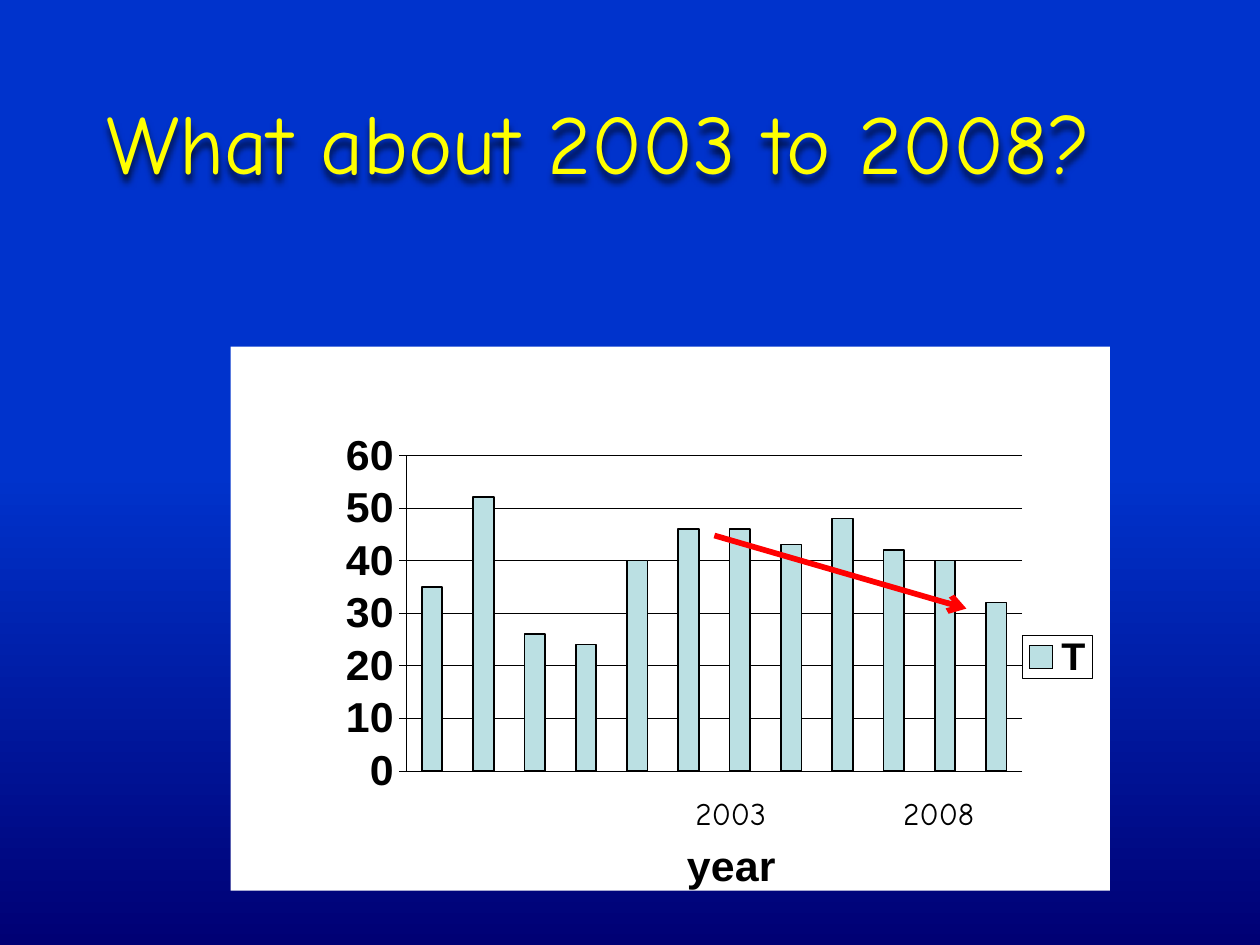
from typing import NamedTuple

from lxml.etree import fromstring
from pptx import Presentation
from pptx.chart.data import CategoryChartData
from pptx.dml.color import RGBColor
from pptx.enum.chart import XL_CHART_TYPE as Kind
from pptx.enum.chart import XL_LEGEND_POSITION as Side
from pptx.enum.chart import XL_TICK_LABEL_POSITION as Label
from pptx.enum.chart import XL_TICK_MARK as Tick
from pptx.enum.shapes import MSO_CONNECTOR as Link
from pptx.util import Inches, Pt

BLACK = RGBColor(0x00, 0x00, 0x00)
BLUE = RGBColor(0x00, 0x33, 0xCC)
NAVY = RGBColor(0x00, 0x00, 0x74)
YELLOW = RGBColor(0xFF, 0xFF, 0x00)
RED = RGBColor(0xFF, 0x00, 0x00)
TEAL = RGBColor(0xBB, 0xE0, 0xE3)
NS_A = 'xmlns:a="http://schemas.openxmlformats.org/drawingml/2006/main"'
NS_C = 'xmlns:c="http://schemas.openxmlformats.org/drawingml/2006/chart"'
C = "{http://schemas.openxmlformats.org/drawingml/2006/chart}"
SHADE = (
    f'<a:effectLst {NS_A}><a:outerShdw blurRad="50800" dist="50800" dir="5400000">'
    '<a:srgbClr val="000000"><a:alpha val="70000"/></a:srgbClr>'
    "</a:outerShdw></a:effectLst>"
)
VALUES = (35, 52, 26, 24, 40, 46, 46, 43, 48, 42, 40, 32)


class Note(NamedTuple):
    text: str
    left: float
    top: float
    width: float
    height: float
    size: float
    color: RGBColor


TITLE = Note("What about 2003 to 2008?", 0.75, 0.67, 8.83, 0.91, 48, YELLOW)
YEARS = [
    Note(year, left, 6.25, 0.8, 0.4, 18, BLACK)
    for year, left in (("2003", 5.42), ("2008", 7.07))
]


def set_font(font, size: float, color: RGBColor, name: str, bold: bool) -> None:
    font.size, font.name, font.bold = Pt(size), name, bold
    font.color.rgb = color


def set_line(line, color: RGBColor, width: float) -> None:
    line.color.rgb = color
    line.width = Pt(width)


def add_note(slide, note: Note):
    place = (note.left, note.top, note.width, note.height)
    box = slide.shapes.add_textbox(*map(Inches, place))
    box.text_frame.word_wrap = True
    box.text_frame.text = note.text
    run = box.text_frame.paragraphs[0].runs[0]
    set_font(run.font, note.size, note.color, "Comic Neue", False)
    return box


def set_place(node, index: int, **sizes: float) -> None:
    for old in node.findall(C + "layout"):
        node.remove(old)
    target = '<c:layoutTarget val="inner"/>' if node.tag == C + "plotArea" else ""
    modes = "".join(f'<c:{key}Mode val="edge"/>' for key in "xy")
    parts = "".join(f'<c:{key} val="{size}"/>' for key, size in sizes.items())
    node.insert(index, fromstring(
        f"<c:layout {NS_C}><c:manualLayout>{target}{modes}{parts}"
        "</c:manualLayout></c:layout>"
    ))


def add_panel(node, line: str) -> None:
    panel = fromstring(
        f'<c:spPr {NS_C} {NS_A}><a:solidFill><a:srgbClr val="FFFFFF"/></a:solidFill>'
        f'<a:ln w="3175">{line}</a:ln></c:spPr>'
    )
    node.find(C + "txPr").addprevious(panel)


def add_bars(slide) -> None:
    data = CategoryChartData()
    data.categories = [str(n) for n in range(1, len(VALUES) + 1)]
    data.add_series("T", VALUES)
    place = map(Inches, (1.83, 2.75, 6.98, 4.42))
    chart = slide.shapes.add_chart(Kind.COLUMN_CLUSTERED, *place, data).chart
    chart.has_title = False
    set_font(chart.font, 24.5, BLACK, "Arial", True)
    root = chart.element
    add_panel(root, "<a:noFill/>")
    area = root.find(f"{C}chart/{C}plotArea")
    set_place(area, 0, x=0.2, y=0.2, w=0.7, h=0.58)

    plot = chart.plots[0]
    plot.gap_width = 150
    plot.vary_by_categories = False
    bars = plot.series[0].format
    bars.fill.solid()
    bars.fill.fore_color.rgb = TEAL
    set_line(bars.line, BLACK, 1)

    axis = chart.value_axis
    axis.minimum_scale, axis.maximum_scale, axis.major_unit = 0, 60, 10
    axis.major_tick_mark = Tick.CROSS
    axis.has_major_gridlines = True
    set_font(axis.tick_labels.font, 24.5, BLACK, "Arial", True)
    for line in (axis.format.line, axis.major_gridlines.format.line):
        set_line(line, BLACK, 0.25)

    base = chart.category_axis
    base.tick_label_position = Label.NONE
    base.major_tick_mark = Tick.NONE
    base.format.line.fill.background()
    frame = base.axis_title.text_frame
    frame.text = "year"
    set_font(frame.paragraphs[0].runs[0].font, 24.5, BLACK, "Arial", True)
    set_place(area.find(f"{C}catAx/{C}title"), 1, x=0.51, y=0.89)

    chart.has_legend = True
    key = chart.legend
    key.position = Side.RIGHT
    key.include_in_layout = False
    set_font(key.font, 22.5, BLACK, "Arial", True)
    node = root.find(f"{C}chart/{C}legend")
    add_panel(node, '<a:solidFill><a:srgbClr val="000000"/></a:solidFill>')
    set_place(node, 1, x=0.9, y=0.53, w=0.08, h=0.08)


def add_arrow(slide) -> None:
    ends = map(Inches, (5.67, 4.25, 7.67, 4.83))
    arrow = slide.shapes.add_connector(Link.STRAIGHT, *ends)
    set_line(arrow.line, RED, 3.25)
    arrow.line._get_or_add_ln().append(fromstring(f'<a:tailEnd {NS_A} type="arrow"/>'))
    arrow._element.spPr.append(fromstring(f"<a:effectLst {NS_A}/>"))


def set_back(slide) -> None:
    fill = slide.background.fill
    fill.gradient()
    fill.gradient_angle = 270
    for stop, spot, color in zip(fill.gradient_stops, (0.5, 1), (BLUE, NAVY)):
        stop.position = spot
        stop.color.rgb = color


def main() -> None:
    """Build the slide with the yearly bars and the falling arrow."""
    deck = Presentation()
    deck.slide_width, deck.slide_height = Inches(10), Inches(7.5)
    slide = deck.slides.add_slide(deck.slide_layouts[6])
    set_back(slide)
    add_bars(slide)
    title = add_note(slide, TITLE)
    title._element.spPr.append(fromstring(SHADE))
    for year in YEARS:
        add_note(slide, year)
    add_arrow(slide)
    deck.save("out.pptx")


if __name__ == "__main__":
    main()
